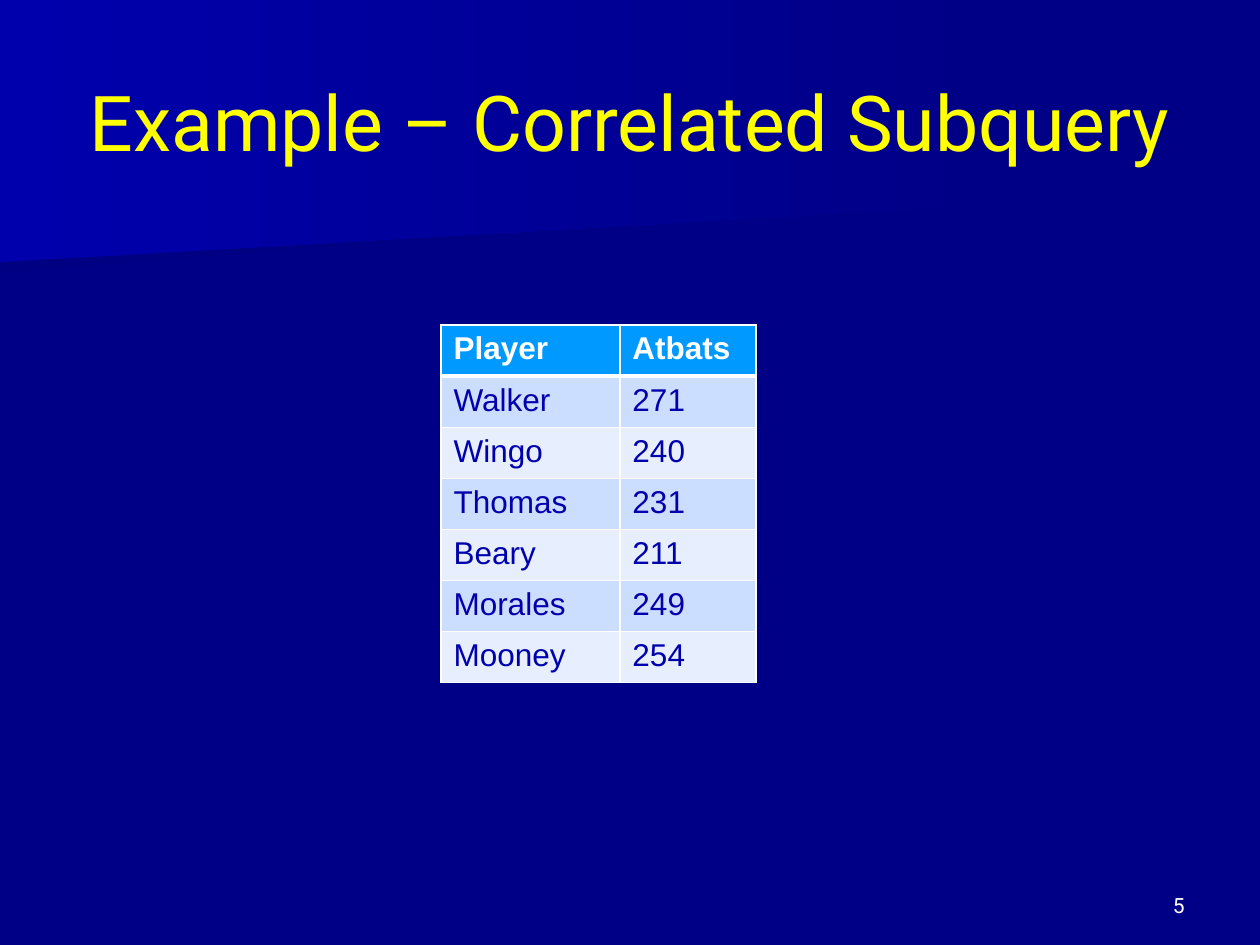
"""Build the correlated subquery example slide."""
from dataclasses import dataclass

from lxml import etree
from pptx import Presentation
from pptx.dml.color import RGBColor
from pptx.enum.text import MSO_ANCHOR, PP_ALIGN
from pptx.oxml.ns import qn
from pptx.util import Inches, Pt

MIDDLE, BOTTOM = MSO_ANCHOR.MIDDLE, MSO_ANCHOR.BOTTOM
LEFT, CENTER, RIGHT = PP_ALIGN.LEFT, PP_ALIGN.CENTER, PP_ALIGN.RIGHT
BLANK_LAYOUT = 6


@dataclass(frozen=True)
class Theme:
    """Colours, fonts and type sizes."""
    background: str = "000086"
    shade: str = "000083"
    glow: str = "0000AC"
    title: str = "FFFF00"
    white: str = "FFFFFF"
    header: str = "0099FF"
    bands: tuple[str, str] = ("CCDEFF", "E7EFFF")
    display_font: str = "Roboto"
    table_font: str = "Arial"
    title_size: int = 44
    table_size: int = 18
    number_size: int = 12
    thin_rule: int = 1
    header_rule: int = 3


@dataclass(frozen=True)
class Beam:
    """A gradient polygon behind the title, in inches."""
    points: tuple[tuple[float, float], ...]
    start: str


@dataclass(frozen=True)
class Label:
    """A text box with its place in inches and its style."""
    text: str
    place: tuple[float, float, float, float]
    size: int
    color: str
    anchor: MSO_ANCHOR
    align: PP_ALIGN


THEME = Theme()
BEAMS = (
    Beam(((7.78, 1.53), (0, 2.17), (0, 1.01), (7.79, 1.01), (7.78, 1.28)), THEME.shade),
    Beam(((7.92, 1.62), (0, 2.08), (0, 0), (7.92, 0)), THEME.glow),
)
LABELS = (
    Label("Example – Correlated Subquery", (0.5, 0.33, 9, 1.25),
          THEME.title_size, THEME.title, MIDDLE, CENTER),
    Label("5", (7.17, 6.83, 2.33, 0.5),
          THEME.number_size, THEME.white, BOTTOM, RIGHT),
)
ROWS = (
    ("Player", "Atbats"),
    ("Walker", "271"),
    ("Wingo", "240"),
    ("Thomas", "231"),
    ("Beary", "211"),
    ("Morales", "249"),
    ("Mooney", "254"),
)
TABLE_PLACE = (3.5, 2.58, 2.5, 2.84)
COLUMN_WIDTHS = (1.42, 1.08)


def write(para, text: str, align: PP_ALIGN, color: str, **values) -> None:
    """Fill a paragraph with one formatted span."""
    para.alignment = align
    span = para.add_run()
    span.text = text
    for name, value in values.items():
        setattr(span.font, name, value)
    span.font.color.rgb = RGBColor.from_string(color)


def draw_beam(page, beam: Beam) -> None:
    """Draw one polygon that fades into the background."""
    points = [(Inches(x), Inches(y)) for x, y in beam.points]
    builder = page.shapes.build_freeform(*points[0])
    builder.add_line_segments(points[1:], close=True)
    shape = builder.convert_to_shape()
    shape.shadow.inherit = False
    shape.line.fill.background()
    shape.fill.gradient()
    shape.fill.gradient_angle = 0
    for stop, color in zip(shape.fill.gradient_stops, (beam.start, THEME.background)):
        stop.color.rgb = RGBColor.from_string(color)


def draw_label(page, label: Label) -> None:
    """Draw one text box."""
    box = page.shapes.add_textbox(*map(Inches, label.place))
    frame = box.text_frame
    frame.word_wrap = True
    frame.vertical_anchor = label.anchor
    write(frame.paragraphs[0], label.text, label.align, label.color,
          name=THEME.display_font, size=Pt(label.size))


def draw_borders(cell, top: int, bottom: int) -> None:
    """Rule all four sides of a cell, with widths in points."""
    widths = {"L": THEME.thin_rule, "R": THEME.thin_rule, "T": top, "B": bottom}
    properties = cell._tc.get_or_add_tcPr()
    for side, width in widths.items():
        line = etree.SubElement(properties, qn(f"a:ln{side}"), w=str(Pt(width)))
        solid = etree.SubElement(line, qn("a:solidFill"))
        etree.SubElement(solid, qn("a:srgbClr"), val=THEME.white)


def draw_table(page) -> None:
    """Draw the table of players and at-bats."""
    place = map(Inches, TABLE_PLACE)
    table = page.shapes.add_table(len(ROWS), len(COLUMN_WIDTHS), *place).table
    for column, width in zip(table.columns, COLUMN_WIDTHS):
        column.width = Inches(width)
    for index, row in enumerate(ROWS):
        is_header = index == 0
        fill = THEME.header if is_header else THEME.bands[(index - 1) % 2]
        color = THEME.white if is_header else THEME.glow
        top = THEME.header_rule if index == 1 else THEME.thin_rule
        bottom = THEME.header_rule if is_header else THEME.thin_rule
        for cell, text in zip(table.rows[index].cells, row):
            draw_borders(cell, top, bottom)
            cell.fill.solid()
            cell.fill.fore_color.rgb = RGBColor.from_string(fill)
            write(cell.text_frame.paragraphs[0], text, LEFT, color,
                  name=THEME.table_font, size=Pt(THEME.table_size), bold=is_header)


def main() -> None:
    """Build and save the deck."""
    deck = Presentation()
    deck.slide_width, deck.slide_height = Inches(10), Inches(7.5)
    page = deck.slides.add_slide(deck.slide_layouts[BLANK_LAYOUT])
    page.background.fill.solid()
    page.background.fill.fore_color.rgb = RGBColor.from_string(THEME.background)
    for beam in BEAMS:
        draw_beam(page, beam)
    for label in LABELS:
        draw_label(page, label)
    draw_table(page)
    deck.save("out.pptx")


if __name__ == "__main__":
    main()
